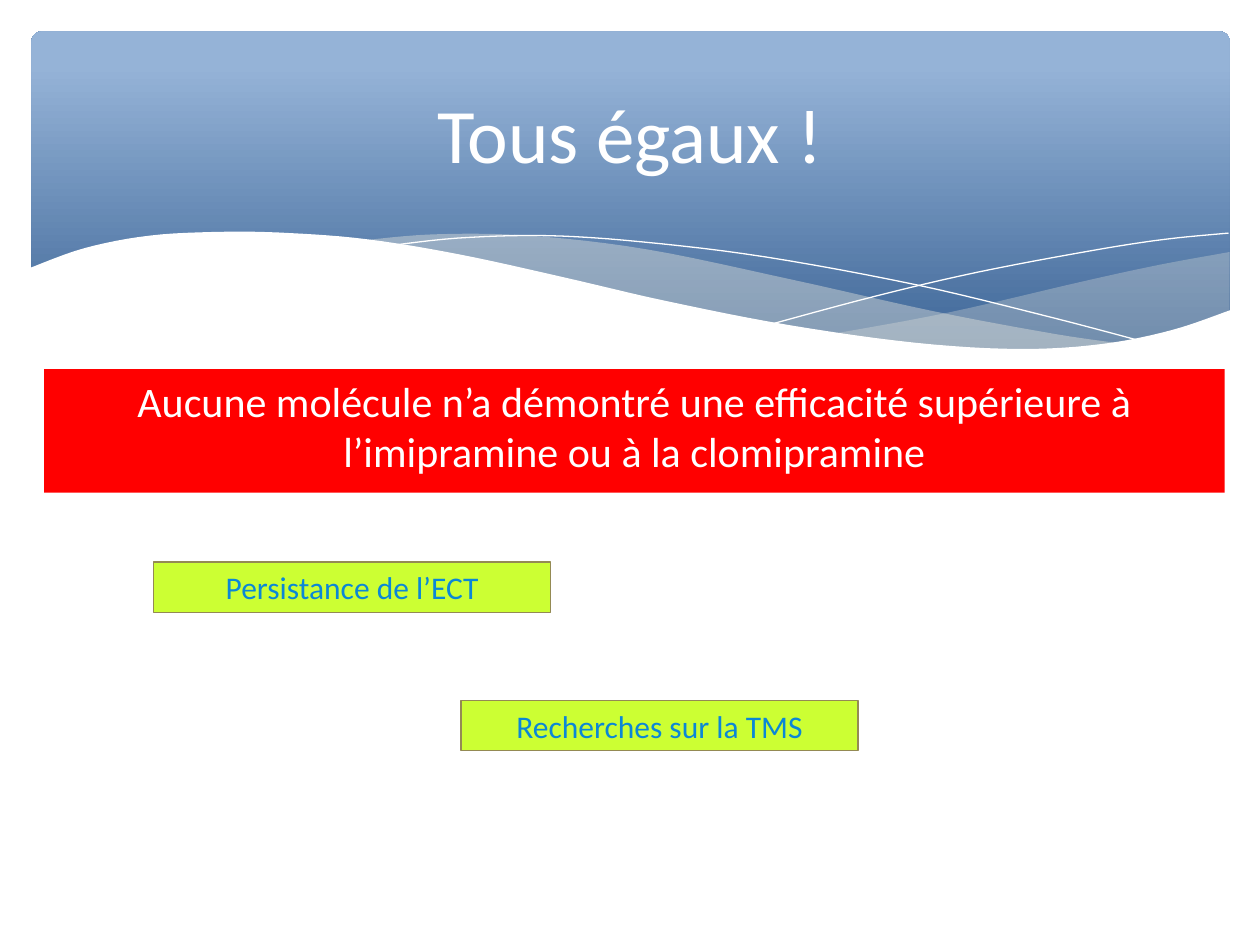
from dataclasses import dataclass

from lxml import etree
from pptx import Presentation
from pptx.dml.color import RGBColor
from pptx.enum.shapes import MSO_SHAPE
from pptx.enum.text import MSO_ANCHOR, PP_ALIGN
from pptx.oxml.ns import qn
from pptx.util import Inches, Pt

RECT, ROUND_RECT = MSO_SHAPE.RECTANGLE, MSO_SHAPE.ROUNDED_RECTANGLE
TOP, MIDDLE = MSO_ANCHOR.TOP, MSO_ANCHOR.MIDDLE
CENTER = PP_ALIGN.CENTER


@dataclass(frozen=True)
class Theme:
    font: str = "Calibri"
    title_size: int = 44
    banner_size: int = 24
    label_size: int = 18
    white: str = "FFFFFF"
    deep_blue: str = "376092"
    light_blue: str = "95B3D7"
    cream: str = "EEECE1"
    red: str = "FF0000"
    lime: str = "CCFF33"
    olive: str = "948A54"
    label_blue: str = "0B87D6"
    line_width: float = 0.75


THEME = Theme()

RIGHT_VEIL = (
    [(6.61, 2.65), (7.53, 2.48), (8.61, 2.23), (9.21, 2.1), (9.76, 2)],
    [(9.76, 2.47), (9.28, 2.63), (8.72, 2.74), (8.03, 2.78), (7.32, 2.74), (6.61, 2.65)],
)
LEFT_VEIL = (
    [(2.86, 1.91), (3.44, 1.86), (4.2, 1.87), (5.14, 1.98), (6.29, 2.22), (7.41, 2.47),
     (8.37, 2.65), (8.93, 2.73)],
    [(8.93, 2.73), (8.18, 2.78), (7.36, 2.75), (6.5, 2.64), (5.66, 2.48), (4.49, 2.22),
     (3.62, 2.03), (2.86, 1.91)],
)
FALLING_LINE = [(3.09, 1.95), (3.63, 1.89), (4.33, 1.87), (5.1, 1.92), (6.08, 2.04),
                (7.27, 2.26), (8.31, 2.51), (9.07, 2.71)]
RISING_LINE = [(6.13, 2.57), (6.95, 2.35), (7.76, 2.16), (8.66, 1.99), (9.24, 1.9), (9.75, 1.85)]
FOREGROUND = (
    [(9.77, 2.46), (9.3, 2.62), (8.75, 2.73), (8.09, 2.77), (7.26, 2.72), (6.26, 2.58),
     (5.29, 2.39), (4.47, 2.2), (3.65, 2.02), (2.92, 1.9), (2.3, 1.85), (1.77, 1.84),
     (1.19, 1.87), (0.67, 1.97), (0.23, 2.13)],
    [(0.23, 3.29), (9.77, 3.29)],
)


def color(code):
    return RGBColor.from_string(code)


def smooth(knots, steps=6):
    padded = [knots[0], *knots, knots[-1]]
    points = [knots[0]]
    for a, b, c, d in zip(padded, padded[1:], padded[2:], padded[3:]):
        for step in range(1, steps + 1):
            t = step / steps
            points.append(tuple(
                (2 * q + (r - p) * t + (2 * p - 5 * q + 4 * r - s) * t ** 2
                 + (3 * q - p - 3 * r + s) * t ** 3) / 2
                for p, q, r, s in zip(a, b, c, d)))
    return points


def paint(sp, fill=None, line=None, alpha=None):
    sp.shadow.inherit = False
    if fill:
        sp.fill.solid()
        sp.fill.fore_color.rgb = color(fill)
    else:
        sp.fill.background()
    if line:
        sp.line.color.rgb = color(line)
        sp.line.width = Pt(THEME.line_width)
    else:
        sp.line.fill.background()
    if alpha:
        srgb = sp.fill._xPr.find(f".//{qn('a:srgbClr')}")
        etree.SubElement(srgb, qn("a:alpha"), val=str(alpha * 1000))


def write(sp, text, size, ink, anchor=TOP):
    tf = sp.text_frame
    frame_format = {
        "word_wrap": True, "vertical_anchor": anchor,
        "margin_left": Inches(0.1), "margin_right": Inches(0.1),
        "margin_top": Inches(0.05), "margin_bottom": Inches(0.05),
    }
    for name, value in frame_format.items():
        setattr(tf, name, value)
    p = tf.paragraphs[0]
    p.alignment = CENTER
    r = p.add_run()
    r.text = text
    font_format = {"name": THEME.font, "size": Pt(size)}
    for name, value in font_format.items():
        setattr(r.font, name, value)
    r.font.color.rgb = color(ink)


def add_curve(s, edges, closed=True, **style):
    points = [(Inches(x), Inches(y)) for edge in edges for x, y in smooth(edge)]
    builder = s.shapes.build_freeform(*points[0])
    builder.add_line_segments(points[1:], close=closed)
    paint(builder.convert_to_shape(), **style)


def add_sky(s):
    sp = s.shapes.add_shape(ROUND_RECT, *map(Inches, (0.25, 0.25, 9.51, 2.7)))
    sp.adjustments[0] = 0.03
    paint(sp)
    sp.fill.gradient()
    sp.fill.gradient_angle = 90
    stops = ((0, THEME.deep_blue), (0.9, THEME.light_blue))
    for stop, (position, code) in zip(sp.fill.gradient_stops, stops):
        stop.position = position
        stop.color.rgb = color(code)


def add_waves(s):
    add_curve(s, RIGHT_VEIL, fill=THEME.cream, alpha=29)
    add_curve(s, LEFT_VEIL, fill=THEME.cream, alpha=40)
    for edge in (FALLING_LINE, RISING_LINE):
        add_curve(s, [edge], closed=False, line=THEME.white)
    add_curve(s, FOREGROUND, fill=THEME.white)


def add_box(s, box, text, size, ink, **style):
    sp = s.shapes.add_shape(RECT, *map(Inches, box))
    paint(sp, **style)
    write(sp, text, size, ink)


def place_title(s, text):
    title = s.shapes.title
    for name, value in zip(("left", "top", "width", "height"), (0.5, 0.37, 9, 1.37)):
        setattr(title, name, Inches(value))
    write(title, text, THEME.title_size, THEME.white, MIDDLE)
    s.shapes._spTree.append(title._element)


def main():
    prs = Presentation()
    prs.slide_width, prs.slide_height = Inches(10), Inches(7.5)
    s = prs.slides.add_slide(prs.slide_layouts[5])
    add_sky(s)
    add_waves(s)
    add_box(s, (0.35, 2.93, 9.37, 0.98),
            "Aucune molécule n’a démontré une efficacité supérieure à "
            "l’imipramine ou à la clomipramine",
            THEME.banner_size, THEME.white, fill=THEME.red)
    place_title(s, "Tous égaux !")
    labels = ((1.22, 4.46, "Persistance de l’ECT"), (3.66, 5.56, "Recherches sur la TMS"))
    for left, top, text in labels:
        add_box(s, (left, top, 3.15, 0.4), text, THEME.label_size, THEME.label_blue,
                fill=THEME.lime, line=THEME.olive)
    prs.save("out.pptx")


if __name__ == "__main__":
    main()
